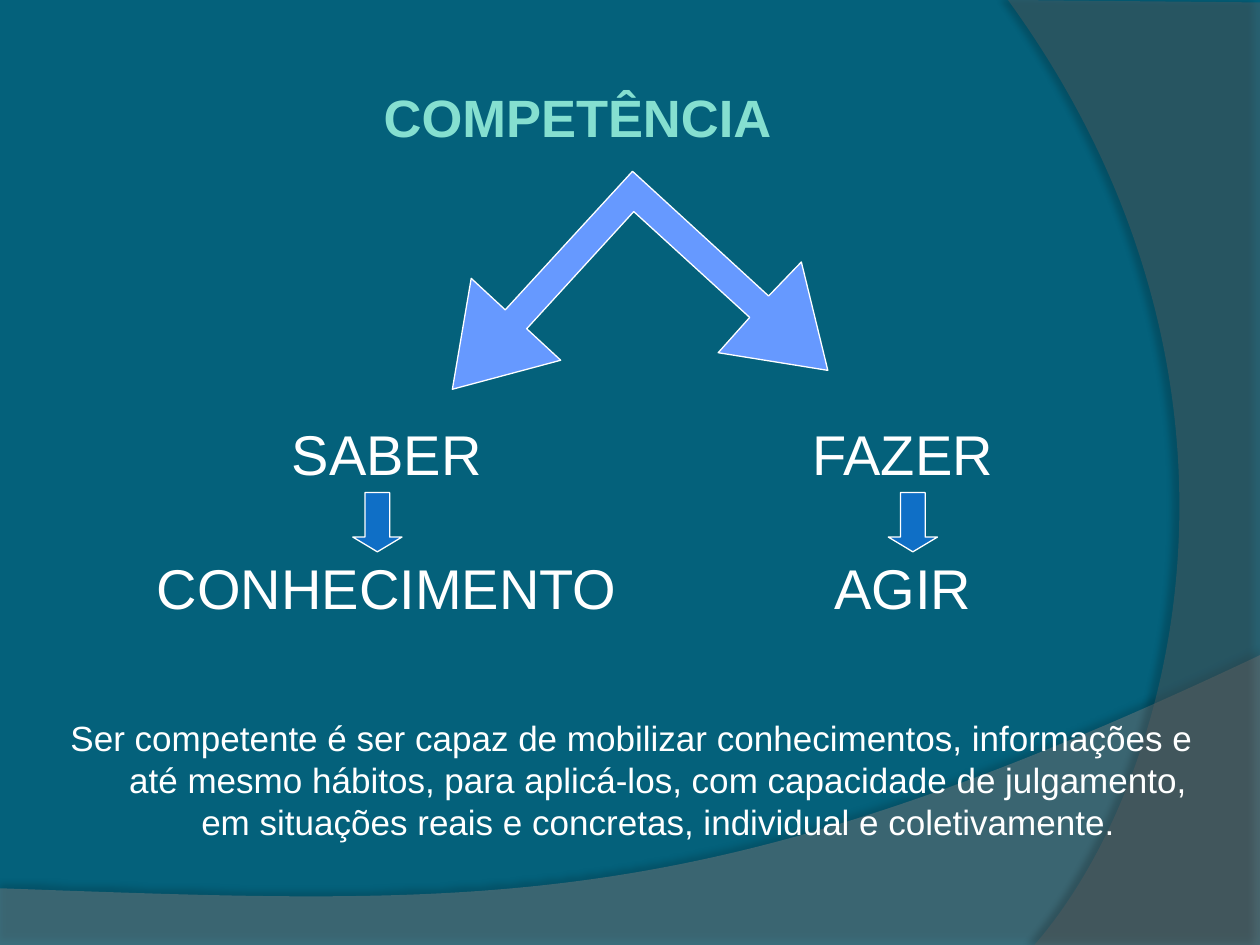
from lxml import etree
from pptx import Presentation, util as u
from pptx.dml.color import RGBColor
from pptx.enum import shapes, text
from pptx.oxml import parse_xml
from pptx.oxml.ns import qn

A = "http://schemas.openxmlformats.org/drawingml/2006/main"
WHITE = "FFFFFF"


def rgb(hex_color):
    return RGBColor.from_string(hex_color)


def add_text(box, lines, size, color, bold=False, gap=0):
    """Add a centred text box; gap is the space before later lines."""
    tf = s.shapes.add_textbox(*map(u.Inches, box)).text_frame
    tf.word_wrap = True
    for i, line in enumerate(lines):
        p = tf.paragraphs[0] if i == 0 else tf.add_paragraph()
        p.text = line
        p.alignment = text.PP_ALIGN.CENTER
        p.space_before = u.Pt(gap if i else 0)
        p.font.name, p.font.size, p.font.bold = "Arial", u.Pt(size), bold
        p.font.color.rgb = rgb(color)
    return tf


def add_outline(points):
    """Add a closed freeform through points given in inches."""
    pts = [(u.Inches(x), u.Inches(y)) for x, y in points]
    fb = s.shapes.build_freeform(*pts[0])
    fb.add_line_segments(pts[1:])
    return fb.convert_to_shape()


prs = Presentation()
prs.slide_width, prs.slide_height = u.Inches(10), u.Inches(7.5)
s = prs.slides.add_slide(prs.slide_layouts[6])
s.background.fill.solid()
s.background.fill.fore_color.rgb = rgb("04617B")

# Translucent waves: the last three points of each are one Bezier segment
# points, colour, opacity %, shadow opacity %, distance, direction
waves = [
    ([(0, 7.05), (0, 7.5), (10, 7.5), (10, 5.2), (5.59, 7.29), (3.91, 7.19), (0, 7.05)],
     "7F7F7F", 45, 35, 3.5, 270),
    ([(8, 0), (10, 0.02), (10, 7.5), (8.21, 7.5), (9.35, 6.19), (10.18, 3), (8, 0)],
     "5E5E5E", 40, 45, 4, 180),
]
for points, color, opacity, shade, dist, angle in waves:
    sp = add_outline(points)
    outline = next(sp._element.iter(qn("a:path")))
    lines = outline.findall(qn("a:lnTo"))[-3:]
    curve = etree.Element(qn("a:cubicBezTo"))
    lines[0].addprevious(curve)
    for line in lines:
        curve.append(line[0])
        outline.remove(line)
    # A control point may lie past the slide: end the frame at its right edge
    sp.width = prs.slide_width - sp.left
    outline.set("w", str(sp.width))

    sp.fill.solid()
    sp.fill.fore_color.rgb = rgb(color)
    sp.line.fill.background()
    clr = sp._element.spPr.find(qn("a:solidFill"))[0]
    etree.SubElement(clr, qn("a:alpha"), val=str(opacity * 1000))
    sp._element.spPr.append(parse_xml(
        f'<a:effectLst xmlns:a="{A}"><a:outerShdw blurRad="{u.Pt(4)}" dist="{u.Pt(dist)}" '
        f'dir="{angle * 60000}" algn="ctr" rotWithShape="0"><a:srgbClr val="000000">'
        f'<a:alpha val="{shade * 1000}"/></a:srgbClr></a:outerShdw></a:effectLst>'))

# Title
tf = add_text((0.5, 0.3, 8.17, 1.25), ["COMPETÊNCIA"], 30, "85DFD0", bold=True)
tf.vertical_anchor = text.MSO_ANCHOR.MIDDLE

# Definition, with a hanging indent
tf = add_text((0.27, 5.64, 9.45, 1.34), [
    "Ser competente é ser capaz de mobilizar conhecimentos, informações e até mesmo "
    "hábitos, para aplicá-los, com capacidade de julgamento, em situações reais e "
    "concretas, individual e coletivamente."], 20, WHITE)
p = tf.paragraphs[0]
p.space_before = u.Pt(4)
pPr = p._p.get_or_add_pPr()
pPr.set("marL", str(u.Inches(0.46)))
pPr.set("indent", str(u.Inches(-0.42)))

# Two-headed arrow from the title to both branches
arrows = [(add_outline([
    (3.59, 3.09), (4.45, 2.86), (4.18, 2.61), (5.03, 1.68), (5.95, 2.52), (5.7, 2.8),
    (6.57, 2.94), (6.36, 2.08), (6.1, 2.35), (5.02, 1.36), (4.01, 2.46), (3.74, 2.21),
]), "6699FF")]

# Branches: two words with a down arrow between them
for left, width, arrow_left, words in [
    (1.14, 3.86, 2.8, ["SABER", "CONHECIMENTO"]),
    (6.34, 1.65, 7.05, ["FAZER", "AGIR"]),
]:
    tf = add_text((left, 3.28, width, 1.7), words, 32, WHITE, gap=38)
    tf.word_wrap = False
    sp = s.shapes.add_shape(shapes.MSO_SHAPE.DOWN_ARROW, u.Inches(arrow_left),
                            u.Inches(3.91), u.Inches(0.39), u.Inches(0.47))
    sp.adjustments[1] = 0.3
    arrows.append((sp, "0F6FC6"))

for sp, color in arrows:
    sp.shadow.inherit = False
    sp.fill.solid()
    sp.fill.fore_color.rgb = rgb(color)
    sp.line.color.rgb = rgb(WHITE)
    sp.line.width = u.Pt(0.75)

prs.save("out.pptx")
